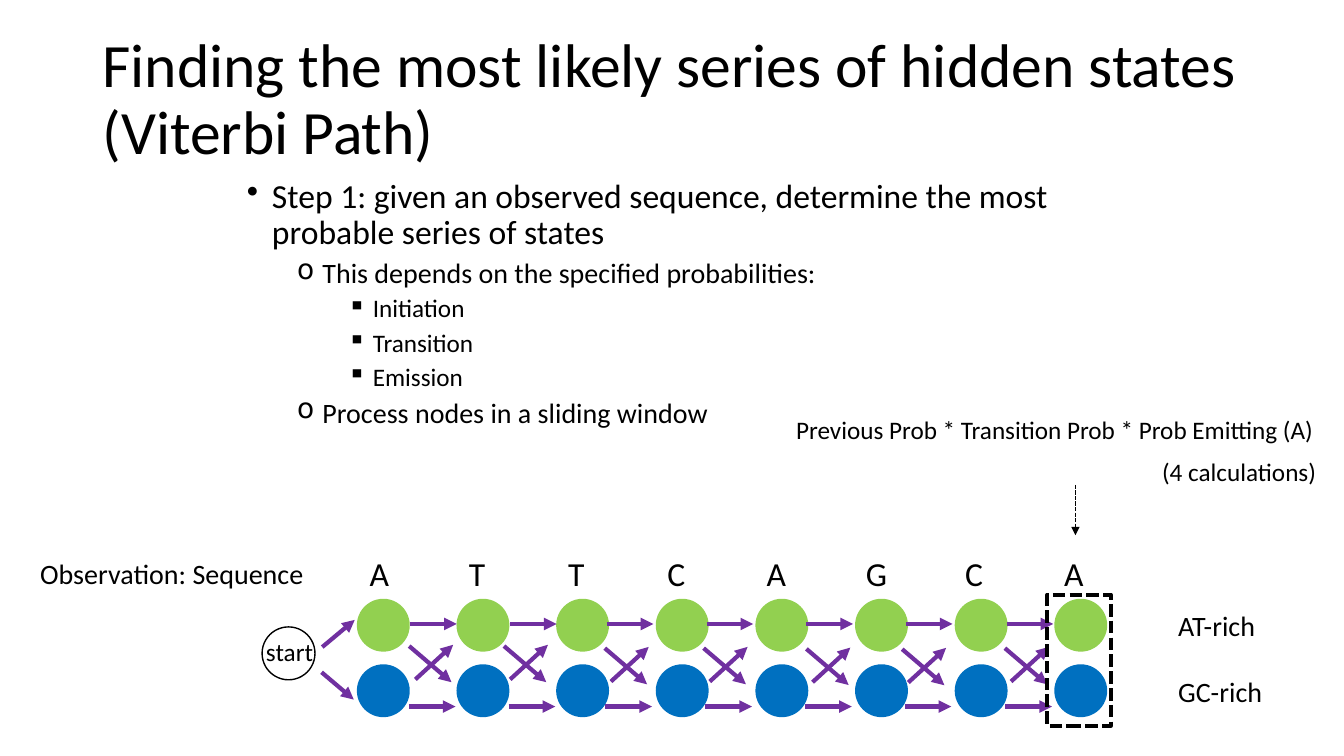
from lxml.etree import SubElement
from pptx import Presentation
from pptx.dml.color import RGBColor
from pptx.enum.dml import MSO_LINE
from pptx.enum.shapes import MSO_CONNECTOR, MSO_SHAPE
from pptx.enum.text import MSO_ANCHOR, MSO_AUTO_SIZE, PP_ALIGN
from pptx.oxml.ns import qn
from pptx.util import Pt

BLACK, WHITE, PURPLE = "000000", "FFFFFF", "7030A0"
hex_color = RGBColor.from_string


def add_label(text, left, top, width, height, size, align=PP_ALIGN.LEFT):
    label = slide.shapes.add_textbox(Pt(left), Pt(top), Pt(width), Pt(height))
    label.text_frame.word_wrap = True
    label.text_frame.text = text
    paragraph = label.text_frame.paragraphs[0]
    paragraph.alignment = align
    font = paragraph.runs[0].font
    font.name, font.size, font.color.rgb = "Calibri", Pt(size), hex_color(BLACK)


def add_arrow(x1, y1, x2, y2, color=PURPLE, weight=3, dash=None):
    arrow = slide.shapes.add_connector(
        MSO_CONNECTOR.STRAIGHT, Pt(x1), Pt(y1), Pt(x2), Pt(y2))
    arrow.line.color.rgb = hex_color(color)
    arrow.line.width = Pt(weight)
    if dash:
        arrow.line.dash_style = dash
    SubElement(arrow.get_or_add_ln(), qn("a:tailEnd"), type="triangle")
    SubElement(arrow._element.spPr, qn("a:effectLst"))


prs = Presentation()
prs.slide_width, prs.slide_height = Pt(960), Pt(540)
slide = prs.slides.add_slide(prs.slide_layouts[5])

title = slide.shapes.title
title.left, title.top, title.width, title.height = Pt(66), Pt(20), Pt(828), Pt(104.4)
title.text_frame.text = "Finding the most likely series of hidden states (Viterbi Path)"
title.text_frame.auto_size = MSO_AUTO_SIZE.NONE
title.text_frame.vertical_anchor = MSO_ANCHOR.MIDDLE
heading = title.text_frame.paragraphs[0]
heading.alignment = PP_ALIGN.LEFT
heading.line_spacing = 0.9
heading_font = heading.runs[0].font
heading_font.name, heading_font.size = "Calibri", Pt(44)
heading_font.color.rgb = hex_color(BLACK)

outline = [
    (0, "Step 1: given an observed sequence, determine the most probable series of states"),
    (1, "This depends on the specified probabilities:"),
    (2, "Initiation"),
    (2, "Transition"),
    (2, "Emission"),
    (1, "Process nodes in a sliding window"),
]
level_styles = [("•", 24, 10), ("o", 20, 5), ("▪", 18, 5)]
steps = slide.shapes.add_textbox(Pt(169.2), Pt(124.6), Pt(620.6), Pt(274.3)).text_frame
steps.word_wrap = True
steps.text = "\n".join(text for level, text in outline)
for paragraph, (level, text) in zip(steps.paragraphs, outline):
    bullet, size, space = level_styles[level]
    paragraph.level = level
    paragraph.line_spacing = 0.9
    paragraph.space_before = Pt(space)
    font = paragraph.runs[0].font
    font.name, font.size, font.color.rgb = "Calibri", Pt(size), hex_color(BLACK)
    properties = paragraph._p.get_or_add_pPr()
    properties.set("marL", str(Pt(18 + 36 * level)))
    properties.set("indent", str(-Pt(18)))
    SubElement(properties, qn("a:buChar"), char=bullet)

state_pitch, state_size = 71.17, 37.8
for state, top, color in [("AT-rich", 427.7, "92D050"), ("GC-rich", 474.5, "0070C0")]:
    for position in range(8):
        node = slide.shapes.add_shape(
            MSO_SHAPE.OVAL, Pt(254.9 + position * state_pitch), Pt(top),
            Pt(state_size), Pt(state_size))
        node.shadow.inherit = False
        node.fill.solid()
        node.fill.fore_color.rgb = hex_color(color)
        node.line.fill.background()
    add_label(state, 834.5, top + 3.6, 75, 31.5, 20)

add_label("Observation: Sequence", 5, 393.8, 235.4, 31.5, 20, PP_ALIGN.CENTER)
for position, base in enumerate("ATTCAGCA"):
    add_label(base, 257 + position * 70.87, 391.7, 18, 36, 24)

start = slide.shapes.add_shape(
    MSO_SHAPE.OVAL, Pt(187.2), Pt(447.8), Pt(state_size), Pt(state_size))
start.shadow.inherit = False
start.fill.solid()
start.fill.fore_color.rgb = hex_color(WHITE)
start.line.color.rgb = hex_color(BLACK)
start.line.width = Pt(1)
add_label("start", 182.9, 450.7, 68.4, 29, 18)

add_arrow(230.2, 462.2, 253.4, 442.8)
add_arrow(229.7, 480.2, 252.7, 499.7)
stay_starts = [293, 364.3, 433.4, 504.7, 576, 647.1, 719]
switch_starts = [(292.3, 461.5), (360, 461.5), (432, 463), (502.6, 463),
                 (576, 463.5), (644.4, 463.7), (717.8, 463)]
for stay_x, (switch_x, switch_y) in zip(stay_starts, switch_starts):
    add_arrow(stay_x, 445.7, stay_x + 33.3, 445.7)
    add_arrow(stay_x - 0.9, 504.7, stay_x + 32.4, 504.7)
    add_arrow(switch_x + 4.4, switch_y + 23.8, switch_x + 31.4, switch_y - 0.9)
    add_arrow(switch_x, switch_y, switch_x + 30.2, switch_y + 25.8)

add_label("Previous Prob * Transition Prob * Prob Emitting (A)", 561.6, 292.3, 398, 29, 18)
add_label("(4 calculations)", 823, 322.6, 137, 29, 18)
add_arrow(768.2, 346.3, 768.2, 382.3, BLACK, 1, MSO_LINE.SQUARE_DOT)

window = slide.shapes.add_shape(
    MSO_SHAPE.RECTANGLE, Pt(748.1), Pt(424.8), Pt(45.4), Pt(93.6))
window.shadow.inherit = False
window.fill.background()
window.line.color.rgb = hex_color(BLACK)
window.line.width = Pt(3)
window.line.dash_style = MSO_LINE.SQUARE_DOT

prs.save("out.pptx")
